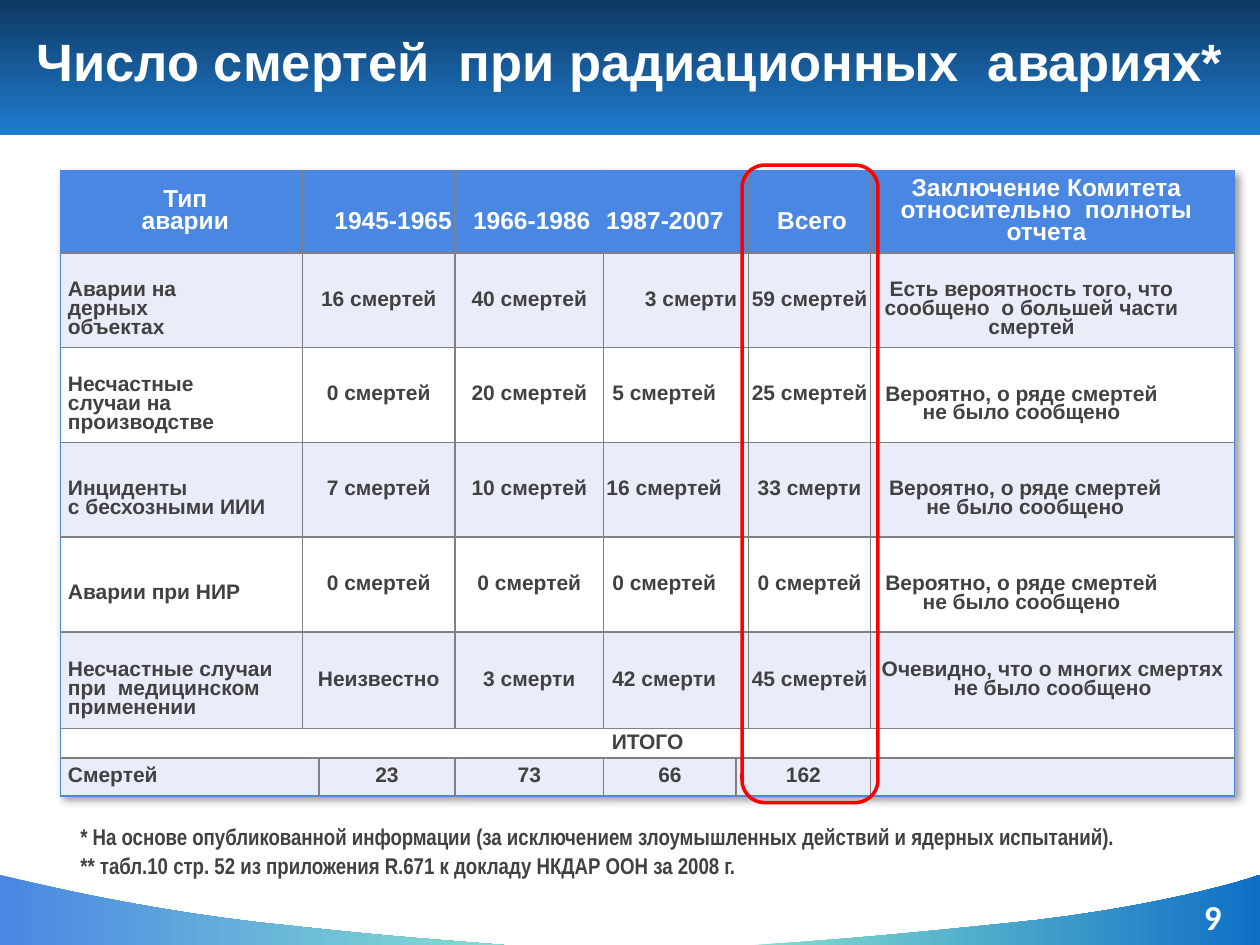
from dataclasses import dataclass

from lxml import etree
from pptx import Presentation
from pptx.dml.color import RGBColor
from pptx.enum.shapes import MSO_SHAPE
from pptx.enum.text import MSO_ANCHOR, PP_ALIGN
from pptx.oxml.ns import qn
from pptx.util import Cm, Pt

LEFT, CENTER = PP_ALIGN.LEFT, PP_ALIGN.CENTER
MIDDLE, TOP = MSO_ANCHOR.MIDDLE, MSO_ANCHOR.TOP
RECT, ROUNDED = MSO_SHAPE.RECTANGLE, MSO_SHAPE.ROUNDED_RECTANGLE

WHITE, TEXT, GRID, BLUE, BAND = "FFFFFF", "414141", "808080", "4987E3", "E9EDFA"
TEAL, RED = "85DFD0", "FF0000"
COL_WIDTHS = [4.88, 0.33, 2.74, 3.0, 2.67, 0.25, 2.46, 7.34]
ROW_HEIGHTS = [1.65] + [1.91] * 4 + [1.95, 0.59, 0.59]
COUNT_SPANS = [2, 1, 2, 1]
HEAD_DROP, BODY_DROP = 0.45, 0.39


@dataclass
class Entry:
    """A table cell: span in columns, margins in cm."""
    text: str
    span: int = 1
    left: float = 0
    right: float = 0
    top: float = 0
    align: PP_ALIGN = CENTER


@dataclass
class Accident:
    kind: str
    counts: list[str]
    verdict: Entry
    kind_right: float = 0


def unsure(left: float = 0.1) -> Entry:
    return Entry("Вероятно, о ряде смертей не было сообщено",
                 left=left, right=1.35, top=BODY_DROP)


HEADER = [
    Entry("Тип аварии", left=1.55, right=1.4),
    Entry("1945-1965", 2, left=0.58, top=HEAD_DROP),
    Entry("1966-1986", left=0.1, top=HEAD_DROP),
    Entry("1987-2007", 2, right=0.45, top=HEAD_DROP),
    Entry("Всего", left=0.1, top=HEAD_DROP),
    Entry("Заключение Комитета относительно  полноты отчета", right=0.25),
]
ACCIDENTS = [
    Accident("Аварии на дерных  объектах",
             ["16 смертей", "40 смертей", "3 смерти", "59 смертей"],
             Entry("Есть вероятность того, что сообщено  о большей части смертей",
                   right=0.85, top=BODY_DROP), 2.2),
    Accident("Несчастные случаи на  производстве",
             ["0 смертей", "20 смертей", "5 смертей", "25 смертей"], unsure(), 1.5),
    Accident("Инциденты\nс бесхозными ИИИ",
             ["7 смертей", "10 смертей", "16 смертей", "33 смерти"], unsure(0.25)),
    Accident("Аварии при НИР", ["0 смертей"] * 4, unsure()),
    Accident("Несчастные случаи при  медицинском применении",
             ["Неизвестно", "3 смерти", "42 смерти", "45 смертей"],
             Entry("Очевидно, что о многих смертях не было сообщено")),
]
TOTALS = [Entry("Смертей", 2, left=0.15, align=LEFT), Entry("23"), Entry("73"),
          Entry("66"), Entry("162", 2), Entry("")]
FOOTNOTES = [
    "* На основе опубликованной информации (за исключением злоумышленных "
    "действий и ядерных испытаний).",
    "** табл.10 стр. 52 из приложения R.671 к докладу НКДАР ООН за 2008 г.",
]


def rgb(color: str) -> RGBColor:
    return RGBColor.from_string(color)


def write(tf, lines: list[str], size: float, color: str, font="Arial",
          align=CENTER, anchor=MIDDLE, spacing: float = 1, gap: float = 0) -> None:
    tf.word_wrap = True
    tf.vertical_anchor = anchor
    for i, line in enumerate(lines):
        p = tf.paragraphs[0] if i == 0 else tf.add_paragraph()
        p.alignment, p.line_spacing = align, spacing
        p.space_before = Pt(gap if i else 0)
        r = p.add_run()
        r.text = line
        r.font.name, r.font.size, r.font.bold = font, Pt(size), True
        r.font.color.rgb = rgb(color)


def set_margins(box, left=0.0, top=0.0, right=0.0, bottom=0.0) -> None:
    box.margin_left, box.margin_top = Cm(left), Cm(top)
    box.margin_right, box.margin_bottom = Cm(right), Cm(bottom)


def paint_gradient(sp, start: str, end: str, angle: float) -> None:
    sp.shadow.inherit = False
    sp.line.fill.background()
    sp.fill.gradient()
    sp.fill.gradient_angle = angle
    for stop, color, pos in zip(sp.fill.gradient_stops, (start, end), (0, 1)):
        stop.color.rgb, stop.position = rgb(color), pos


def add_wave(s, curves: list[list[tuple]], start: str, end: str) -> None:
    """Fill the area between joined Bezier curves and the slide's bottom edge."""
    first, last = curves[0][0], curves[-1][-1]
    points = []
    for curve in curves:
        for step in range(1, 13):
            t = step / 12
            weights = ((1 - t) ** 3, 3 * t * (1 - t) ** 2, 3 * t * t * (1 - t), t ** 3)
            points.append(tuple(Cm(sum(w * pt[axis] for w, pt in zip(weights, curve)))
                                for axis in (0, 1)))
    builder = s.shapes.build_freeform(Cm(first[0]), Cm(first[1]))
    builder.add_line_segments(points + [(Cm(last[0]), Cm(19.06)), (Cm(first[0]), Cm(19.06))])
    paint_gradient(builder.convert_to_shape(), start, end, 0)


def set_borders(cell, colors: dict[str, str]) -> None:
    tcPr = cell._tc.get_or_add_tcPr()
    for i, (side, color) in enumerate(colors.items()):
        ln = etree.Element(qn(f"a:ln{side}"), w=str(Pt(1)))
        fill = etree.SubElement(ln, qn("a:solidFill"))
        etree.SubElement(fill, qn("a:srgbClr"), val=color)
        tcPr.insert(i, ln)


def fill_row(table, row: int, entries: list[Entry]) -> None:
    head, last_row = row == 0, len(ROW_HEIGHTS) - 1
    col = 0
    for entry in entries:
        cell, end = table.cell(row, col), col + entry.span
        if entry.span > 1:
            cell.merge(table.cell(row, end - 1))
        cell.fill.solid()
        cell.fill.fore_color.rgb = rgb(BLUE if head else BAND if row % 2 else WHITE)
        set_borders(cell, {"L": BLUE if col == 0 else GRID,
                           "R": BLUE if end == len(COL_WIDTHS) else GRID,
                           "T": BLUE if head else GRID,
                           "B": BLUE if row == last_row else GRID})
        set_margins(cell, entry.left, entry.top, entry.right)
        cell.vertical_anchor = MIDDLE
        write(cell.text_frame, entry.text.split("\n"), 14 if head else 12,
              WHITE if head else TEXT, align=entry.align, spacing=0.8)
        col = end


def add_accident_table(s) -> None:
    table = s.shapes.add_table(len(ROW_HEIGHTS), len(COL_WIDTHS), Cm(1.22), Cm(3.45),
                               Cm(sum(COL_WIDTHS)), Cm(sum(ROW_HEIGHTS))).table
    table.first_row = table.horz_banding = False
    for column, width in zip(table.columns, COL_WIDTHS):
        column.width = Cm(width)
    for row, height in zip(table.rows, ROW_HEIGHTS):
        row.height = Cm(height)
    effects = etree.Element(qn("a:effectLst"))
    shadow = etree.SubElement(effects, qn("a:outerShdw"), blurRad=str(Pt(4)),
                              dist=str(Pt(3)), dir="2700000")
    black = etree.SubElement(shadow, qn("a:srgbClr"), val="000000")
    etree.SubElement(black, qn("a:alpha"), val="40000")
    table._tbl.tblPr.insert(0, effects)

    fill_row(table, 0, HEADER)
    for row, accident in enumerate(ACCIDENTS, 1):
        kind = Entry(accident.kind, left=0.15, right=accident.kind_right,
                     top=BODY_DROP, align=LEFT)
        counts = [Entry(text, span) for text, span in zip(accident.counts, COUNT_SPANS)]
        if row == 1:
            counts[2].left = 0.6
        else:
            counts[2].right = 0.48
        fill_row(table, row, [kind, *counts, accident.verdict])
    fill_row(table, 6, [Entry("ИТОГО", len(COL_WIDTHS))])
    fill_row(table, 7, TOTALS)


def main() -> None:
    prs = Presentation()
    prs.slide_width, prs.slide_height = Cm(25.4), Cm(19.05)
    s = prs.slides.add_slide(prs.slide_layouts[5])

    banner = s.shapes.add_shape(RECT, 0, 0, Cm(25.4), Cm(2.72))
    paint_gradient(banner, "0E3961", "1F7CD1", 270)
    add_wave(s, [[(-0.02, 17.63), (0, 17.63), (2.34, 18.26), (5.18, 18.59)],
                 [(5.18, 18.59), (7.98, 18.9), (8.56, 18.92), (10.26, 19.06)]], BLUE, TEAL)
    add_wave(s, [[(15.09, 19.06), (16.76, 18.95), (17.47, 18.9), (20.22, 18.62)],
                 [(20.22, 18.62), (22.99, 18.36), (25.17, 17.75), (25.4, 17.63)]],
             TEAL, "0F6FC6")

    title = s.shapes.title
    title.left, title.top, title.width, title.height = Cm(0), Cm(-0.08), Cm(25.4), Cm(2.77)
    set_margins(title.text_frame, 0.1, 0.1, 0.1, 0.1)
    write(title.text_frame, ["Число смертей  при радиационных  авариях*"], 30, WHITE,
          spacing=0.9)
    s.shapes._spTree.append(title._element)

    number = s.shapes.add_textbox(Cm(23.7), Cm(18.06), Cm(1.5), Cm(0.89)).text_frame
    set_margins(number)
    write(number, ["9"], 20, WHITE, "Calibri", anchor=TOP)

    add_accident_table(s)

    notes = s.shapes.add_textbox(Cm(1.62), Cm(16.59), Cm(22.88), Cm(1.14)).text_frame
    set_margins(notes)
    write(notes, FOOTNOTES, 13, TEXT, "Arial Narrow", LEFT, TOP, gap=0.6)

    frame = s.shapes.add_shape(ROUNDED, Cm(14.96), Cm(3.33), Cm(2.74), Cm(12.85))
    frame.shadow.inherit = False
    frame.fill.background()
    frame.line.color.rgb, frame.line.width = rgb(RED), Pt(2)

    prs.save("out.pptx")


if __name__ == "__main__":
    main()
